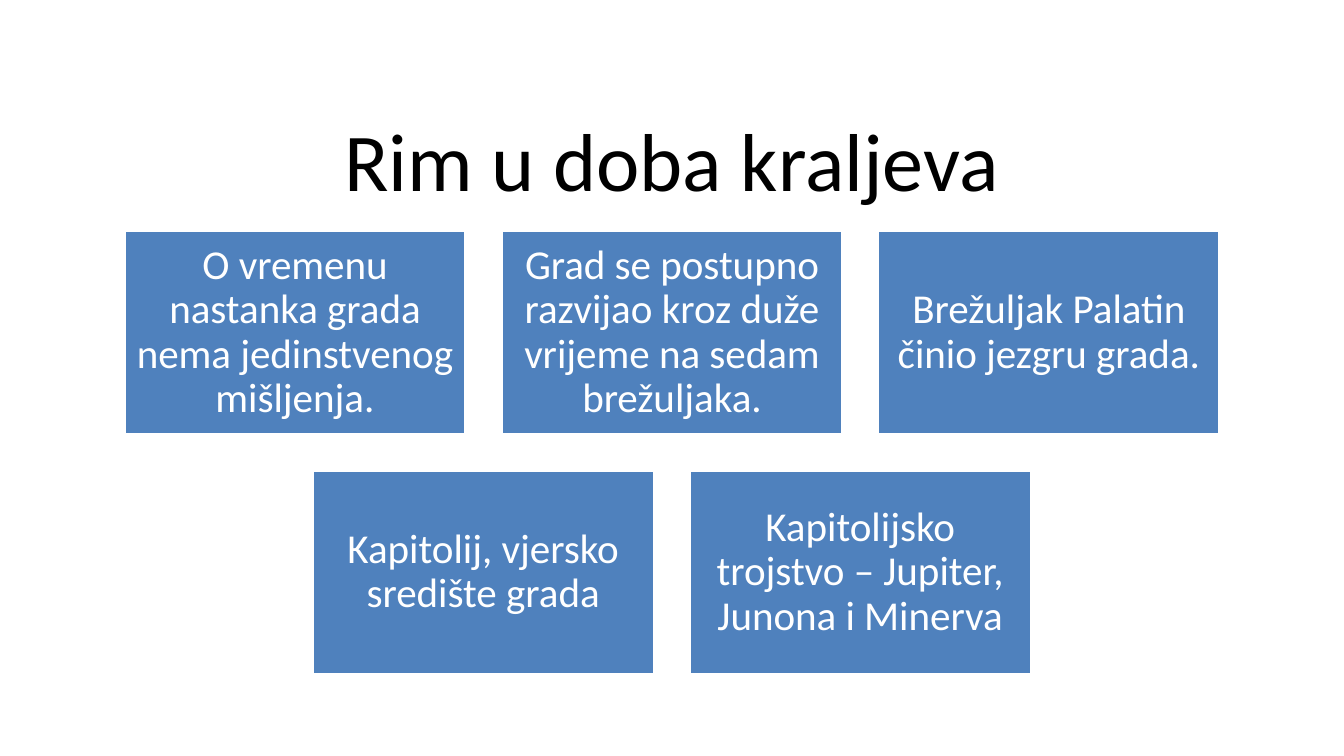
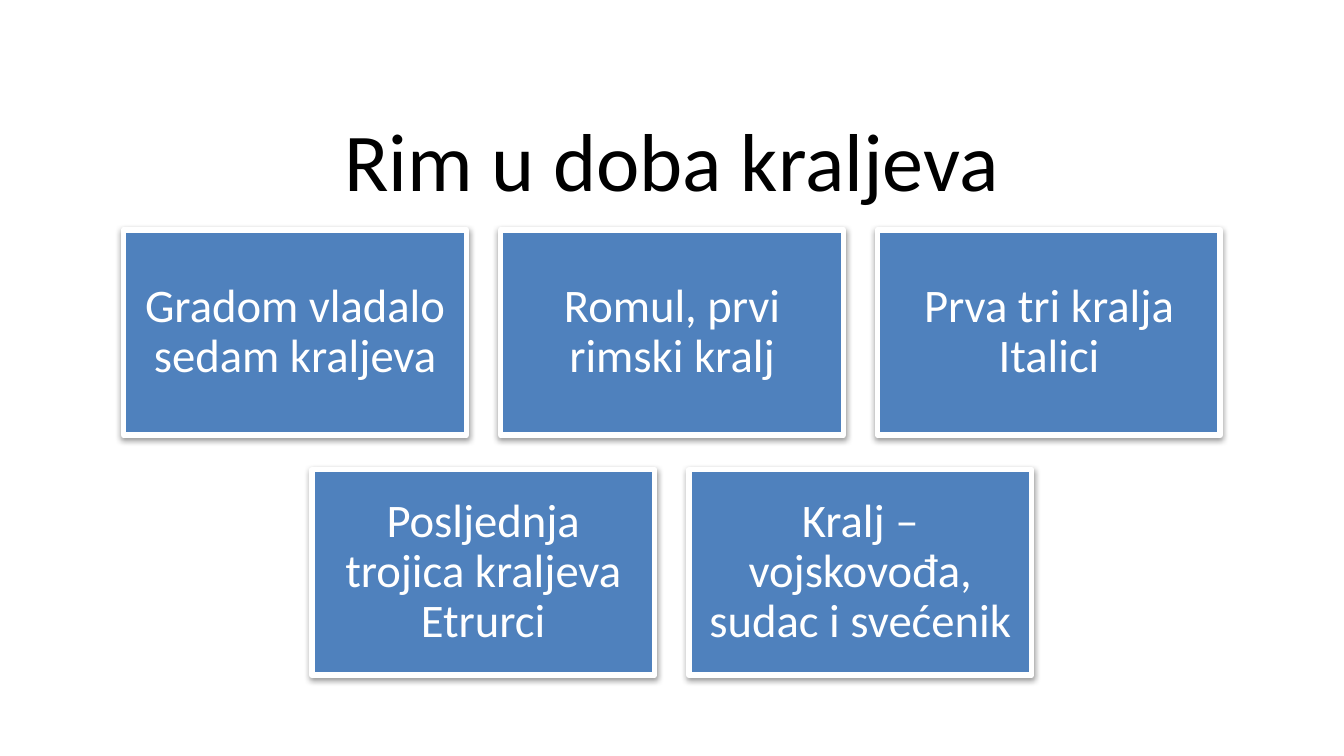
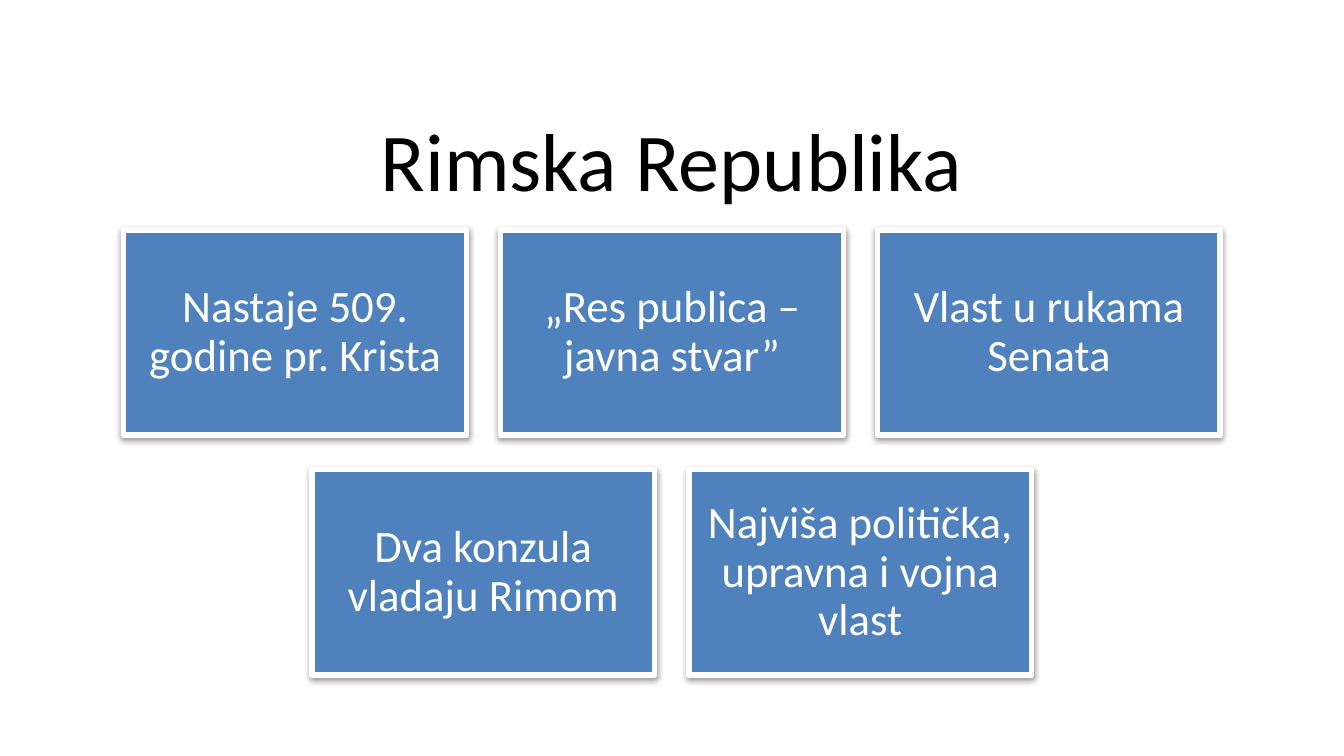
from lxml.etree import SubElement
from pptx import Presentation
from pptx.dml.color import RGBColor
from pptx.enum.shapes import MSO_SHAPE
from pptx.enum.text import MSO_ANCHOR, MSO_AUTO_SIZE, PP_ALIGN
from pptx.oxml.ns import qn
from pptx.util import Emu, Pt

EMU_PER_PX = 4572
SLIDE_WIDTH, SLIDE_HEIGHT = 2000, 1125
TITLE_ONLY_LAYOUT = 5
TILE_WIDTH, TILE_HEIGHT, TILE_GAP = 510, 306, 51
TILES_TOP = 342
TILES_PER_ROW = 3

TOPICS = [
    {
        "title": "Rim u doba kraljeva",
        "tiles": [
            "O vremenu nastanka grada nema jedinstvenog mišljenja.",
            "Grad se postupno razvijao kroz duže vrijeme na sedam brežuljaka.",
            "Brežuljak Palatin činio jezgru grada.",
            "Kapitolij, vjersko središte grada",
            "Kapitolijsko trojstvo – Jupiter, Junona i Minerva",
        ],
        "look": {"size": 22, "inset": 18, "border": 2, "shadow": False},
    },
    {
        "title": "Rim u doba kraljeva",
        "tiles": [
            "Gradom vladalo sedam kraljeva",
            "Romul, prvi rimski kralj",
            "Prva tri kralja Italici",
            "Posljednja trojica kraljeva Etrurci",
            "Kralj – vojskovođa, sudac i svećenik",
        ],
        "look": {"size": 25, "inset": 20, "border": 3, "shadow": True},
    },
    {
        "title": "Rimska Republika",
        "tiles": [
            "Nastaje 509. godine pr. Krista",
            "„Res publica – javna stvar”",
            "Vlast u rukama Senata",
            "Dva konzula vladaju Rimom",
            "Najviša politička, upravna i vojna vlast",
        ],
        "look": {"size": 24, "inset": 20, "border": 3, "shadow": True},
    },
]


def px(length):
    return Emu(length * EMU_PER_PX)


def color(hex_string):
    return RGBColor.from_string(hex_string)


class SlideBuilder:
    font_name = "Calibri"
    title_color = "000000"
    title_size = 44
    tile_color = "4F81BD"
    tile_text_color = "FFFFFF"
    border_color = "FFFFFF"
    shadow_color = "000000"

    def __init__(self, presentation):
        self.presentation = presentation
        self.slide = None

    def add_slide(self):
        layout = self.presentation.slide_layouts[TITLE_ONLY_LAYOUT]
        self.slide = self.presentation.slides.add_slide(layout)

    def add_text(self, shape, text, size, text_color):
        frame = shape.text_frame
        frame.word_wrap = True
        frame.auto_size = MSO_AUTO_SIZE.NONE
        frame.vertical_anchor = MSO_ANCHOR.MIDDLE
        paragraph = frame.paragraphs[0]
        paragraph.alignment = PP_ALIGN.CENTER
        paragraph.line_spacing = 0.9
        run = paragraph.add_run()
        run.text = text
        run.font.name = self.font_name
        run.font.size = Pt(size)
        run.font.color.rgb = color(text_color)

    def add_title(self, text):
        title = self.slide.shapes.title
        title.left, title.top = px(100), px(168)
        title.width, title.height = px(1800), px(156)
        self.add_text(title, text, self.title_size, self.title_color)

    def add_shadow(self, shape):
        effects = shape.element.spPr.find(qn("a:effectLst"))
        shadow = SubElement(effects, qn("a:outerShdw"), blurRad="40000",
                            dist="20000", dir="5400000", rotWithShape="0")
        shade = SubElement(shadow, qn("a:srgbClr"), val=self.shadow_color)
        SubElement(shade, qn("a:alpha"), val="38000")

    def add_tile(self, group, left, top, text, size, inset, border, shadow):
        tile = group.shapes.add_shape(MSO_SHAPE.RECTANGLE, px(left), px(top),
                                      px(TILE_WIDTH), px(TILE_HEIGHT))
        tile.fill.solid()
        tile.fill.fore_color.rgb = color(self.tile_color)
        tile.line.color.rgb = color(self.border_color)
        tile.line.width = Pt(border)
        tile.shadow.inherit = False
        if shadow:
            self.add_shadow(tile)
        frame = tile.text_frame
        frame.margin_left = frame.margin_right = px(inset)
        frame.margin_top = frame.margin_bottom = px(inset)
        self.add_text(tile, text, size, self.tile_text_color)

    def add_tiles(self, texts, look):
        group = self.slide.shapes.add_group_shape()
        for start in range(0, len(texts), TILES_PER_ROW):
            row = texts[start:start + TILES_PER_ROW]
            row_width = len(row) * (TILE_WIDTH + TILE_GAP) - TILE_GAP
            row_left = (SLIDE_WIDTH - row_width) // 2
            top = TILES_TOP + start // TILES_PER_ROW * (TILE_HEIGHT + TILE_GAP)
            for column, text in enumerate(row):
                left = row_left + column * (TILE_WIDTH + TILE_GAP)
                self.add_tile(group, left, top, text, **look)


def main():
    presentation = Presentation()
    presentation.slide_width = px(SLIDE_WIDTH)
    presentation.slide_height = px(SLIDE_HEIGHT)
    builder = SlideBuilder(presentation)
    for topic in TOPICS:
        builder.add_slide()
        builder.add_title(topic["title"])
        builder.add_tiles(topic["tiles"], topic["look"])
    presentation.save("out.pptx")


if __name__ == "__main__":
    main()
